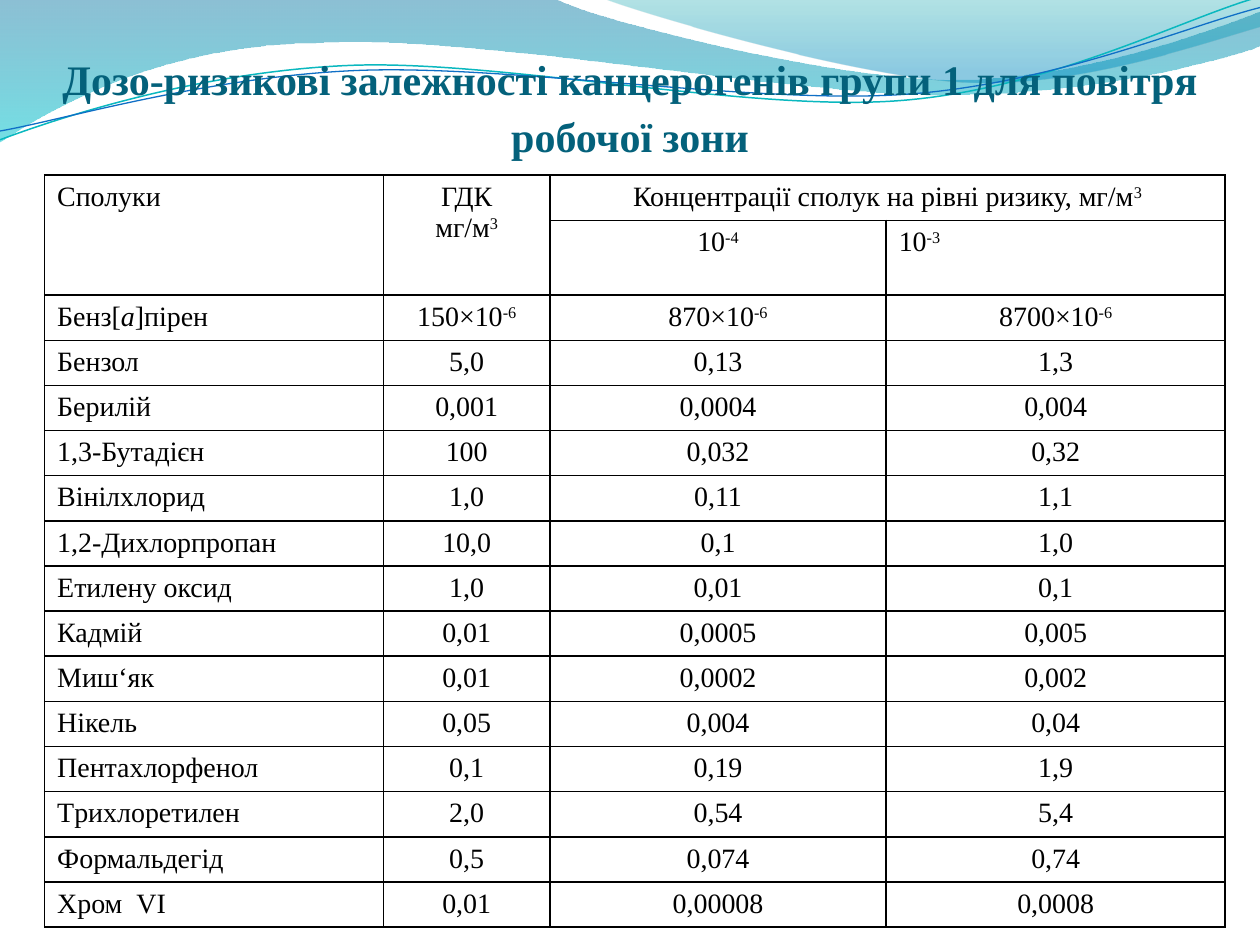
from collections import namedtuple
from dataclasses import dataclass

from lxml import etree
from pptx import Presentation
from pptx import util as u
from pptx.dml.color import RGBColor
from pptx.enum import text
from pptx.oxml.ns import qn

Box = namedtuple("Box", "left top width height")


@dataclass(frozen=True)
class Theme:
    font: str = "Times New Roman"
    title_color: str = "04617B"
    text_color: str = "000000"
    border_color: str = "000000"
    title_size: float = 24
    title_spacing: float = 32.6
    cell_size: float = 16
    border_width: float = 1


THEME = Theme()
PAGE = Box(0, 0, 25.4, 19.05)
TITLE_BOX = Box(0, -0.69, 25.4, 3.99)
TABLE_BOX = Box(0.9, 3.53, 23.8, 15.16)
TITLE = "Дозо-ризикові залежності канцерогенів групи 1 для повітря робочої зони"

# In cell text "|" parts the spans; a span led by "^" is raised, by "/" italic.
HEADER = [
    ["Сполуки", "ГДК\nмг/м|^3", "Концентрації сполук на рівні ризику, мг/м|^3", ""],
    ["", "", "10|^-4", "10|^-3"],
]
COMPOUNDS = [
    ["Бенз[|/a|]пірен", "150×10|^-6", "870×10|^-6", "8700×10|^-6"],
    ["Бензол", "5,0", "0,13", "1,3"],
    ["Берилій", "0,001", "0,0004", "0,004"],
    ["1,3-Бутадієн", "100", "0,032", "0,32"],
    ["Вінілхлорид", "1,0", "0,11", "1,1"],
    ["1,2-Дихлорпропан", "10,0", "0,1", "1,0"],
    ["Етилену оксид", "1,0", "0,01", "0,1"],
    ["Кадмій", "0,01", "0,0005", "0,005"],
    ["Миш‘як", "0,01", "0,0002", "0,002"],
    ["Нікель", "0,05", "0,004", "0,04"],
    ["Пентахлорфенол", "0,1", "0,19", "1,9"],
    ["Tрихлоретилен", "2,0", "0,54", "5,4"],
    ["Формальдегід", "0,5", "0,074", "0,74"],
    ["Хром  VI", "0,01", "0,00008", "0,0008"],
]

# Wave points are in inches. In a pattern, L is a straight segment of one point
# and C a curve of three: two controls and an end.
BANDS = [
    ([(0, -0.01), (4.4, -0.01),
      (4.76, 0.17), (6.64, 0.63), (7.58, 0.63), (8.53, 0.63), (9.58, 0.26), (10, 0.09),
      (10.01, 0.36),
      (9.83, 0.44), (8.7, 0.76), (7.46, 0.75), (6.22, 0.75), (3.82, 0.28), (2.57, 0.34),
      (1.29, 0.35), (0.46, 0.83), (-0.01, 1.13)],
     "LCCLCCC", [(0, "0074A1", 45), (1, "00C6CF", 55)]),
    ([(4.79, -0.01), (5.09, 0.11), (6.82, 0.62), (7.69, 0.65),
      (8.56, 0.69), (9.61, 0.32), (10, 0.21), (10, 0)],
     "CCL", [(0, "00A1A9", 30), (0.8, "008BBF", 45)]),
]
STRANDS = [
    ([(0, 1.11), (0.48, 0.93), (1.58, 0.57), (2.77, 0.52), (3.95, 0.47), (5.93, 0.89),
      (7.13, 0.8), (8.33, 0.71), (9.38, 0.15), (9.98, -0.02)], "0AB8BF", 0.85),
    ([(0, 1.04), (0.47, 0.96), (1.64, 0.61), (2.83, 0.56), (4.03, 0.51), (5.97, 0.83),
      (7.17, 0.75), (8.36, 0.67), (9.41, 0.21), (10, 0.06)], "0F6FC6", 0.75),
]


def color(value):
    return RGBColor.from_string(value)


def place(shape, box):
    shape.left, shape.top, shape.width, shape.height = (u.Cm(side) for side in box)


def add_outline(page, box, points, pattern, close):
    """Draw a freeform, turning each C of the pattern into a Bézier curve."""
    spots = [(u.Cm(box.left + x * 2.54), u.Cm(box.top + y * 2.54)) for x, y in points]
    builder = page.shapes.build_freeform(*spots[0])
    builder.add_line_segments(spots[1:], close=close)
    shape = builder.convert_to_shape()
    shape.shadow.inherit = False
    segments = iter(list(shape.element.iter(qn("a:lnTo"))))
    for kind in pattern:
        first = next(segments)
        if kind == "C":
            curve = etree.Element(qn("a:cubicBezTo"))
            first.addprevious(curve)
            for segment in (first, next(segments), next(segments)):
                curve.append(segment[0])
                segment.getparent().remove(segment)
    return shape


def add_waves(page, box):
    """Draw the waves and hand them to the slide master, behind its placeholders."""
    waves = []
    for points, pattern, stops in BANDS:
        band = add_outline(page, box, points, pattern, True)
        band.line.fill.background()
        band.fill.gradient()
        band.fill.gradient_angle = 270
        for stop, (position, value, _) in zip(band.fill.gradient_stops, stops):
            stop.position = position
            stop.color.rgb = color(value)
        for tone, (_, _, opacity) in zip(band.element.iter(qn("a:srgbClr")), stops):
            etree.SubElement(tone, qn("a:alpha")).set("val", str(opacity * 1000))
        waves.append(band)
    for points, value, width in STRANDS:
        strand = add_outline(page, box, points, "CCC", False)
        strand.fill.background()
        strand.line.color.rgb = color(value)
        strand.line.width = u.Pt(width)
        waves.append(strand)
    front = page.slide_layout.slide_master.placeholders[0].element
    for number, wave in enumerate(waves, 20):
        next(wave.element.iter(qn("p:cNvPr"))).set("id", str(number))
        front.addprevious(wave.element)


def style_paragraph(paragraph, size, value, align, bold=False):
    paragraph.alignment = align
    font = paragraph.font
    font.name, font.size, font.bold = THEME.font, u.Pt(size), bold
    font.color.rgb = color(value)


def set_title(page, box):
    title = page.shapes.title
    place(title, box)
    frame = title.text_frame
    frame.word_wrap = True
    frame.auto_size = text.MSO_AUTO_SIZE.NONE
    frame.vertical_anchor = text.MSO_ANCHOR.BOTTOM
    frame.margin_left = frame.margin_right = 0
    frame.margin_bottom = u.Cm(0.06)
    frame.text = TITLE
    paragraph = frame.paragraphs[0]
    paragraph.line_spacing = u.Pt(THEME.title_spacing)
    style_paragraph(paragraph, THEME.title_size, THEME.title_color,
                    text.PP_ALIGN.CENTER, bold=True)


def add_borders(cell):
    properties = cell._tc.get_or_add_tcPr()
    for side in ("lnL", "lnR", "lnT", "lnB"):
        line = etree.SubElement(properties, qn(f"a:{side}"), w=str(u.Pt(THEME.border_width)))
        fill = etree.SubElement(line, qn("a:solidFill"))
        etree.SubElement(fill, qn("a:srgbClr"), val=THEME.border_color)


def fill_cell(cell, content, align):
    add_borders(cell)
    cell.fill.background()
    frame = cell.text_frame
    for index, line in enumerate(content.split("\n")):
        paragraph = frame.paragraphs[0] if index == 0 else frame.add_paragraph()
        style_paragraph(paragraph, THEME.cell_size, THEME.text_color, align)
        for part in filter(None, line.split("|")):
            span = paragraph.add_run()
            span.text = part.lstrip("^/")
            if part[0] == "^":
                span.font._element.set("baseline", "30000")
            elif part[0] == "/":
                span.font.italic = True


def add_risk_table(page, box):
    rows = HEADER + COMPOUNDS
    row_height = 0.91
    frame = page.shapes.add_table(len(rows), 4, *(u.Cm(side) for side in box))
    table = frame.table
    table.first_row = table.horz_banding = False
    for column, share in zip(table.columns, (2.69, 1.32, 2.67, 2.69)):
        column.width = u.Cm(box.width * share / 9.37)
    for row in table.rows:
        row.height = u.Cm(row_height)
    table.rows[1].height = u.Cm(box.height - row_height * (len(rows) - 1))
    for r, row in enumerate(rows):
        for c, content in enumerate(row):
            if c == 0:
                align = text.PP_ALIGN.JUSTIFY if r > 2 else text.PP_ALIGN.LEFT
            else:
                align = text.PP_ALIGN.LEFT if (r, c) == (1, 3) else text.PP_ALIGN.CENTER
            fill_cell(table.cell(r, c), content, align)
    for start, end in (((0, 0), (1, 0)), ((0, 1), (1, 1)), ((0, 2), (0, 3))):
        table.cell(*start).merge(table.cell(*end))


def main():
    deck = Presentation()
    deck.slide_width, deck.slide_height = u.Cm(PAGE.width), u.Cm(PAGE.height)
    page = deck.slides.add_slide(deck.slide_layouts[5])
    add_waves(page, PAGE)
    set_title(page, TITLE_BOX)
    add_risk_table(page, TABLE_BOX)
    deck.save("out.pptx")


if __name__ == "__main__":
    main()
